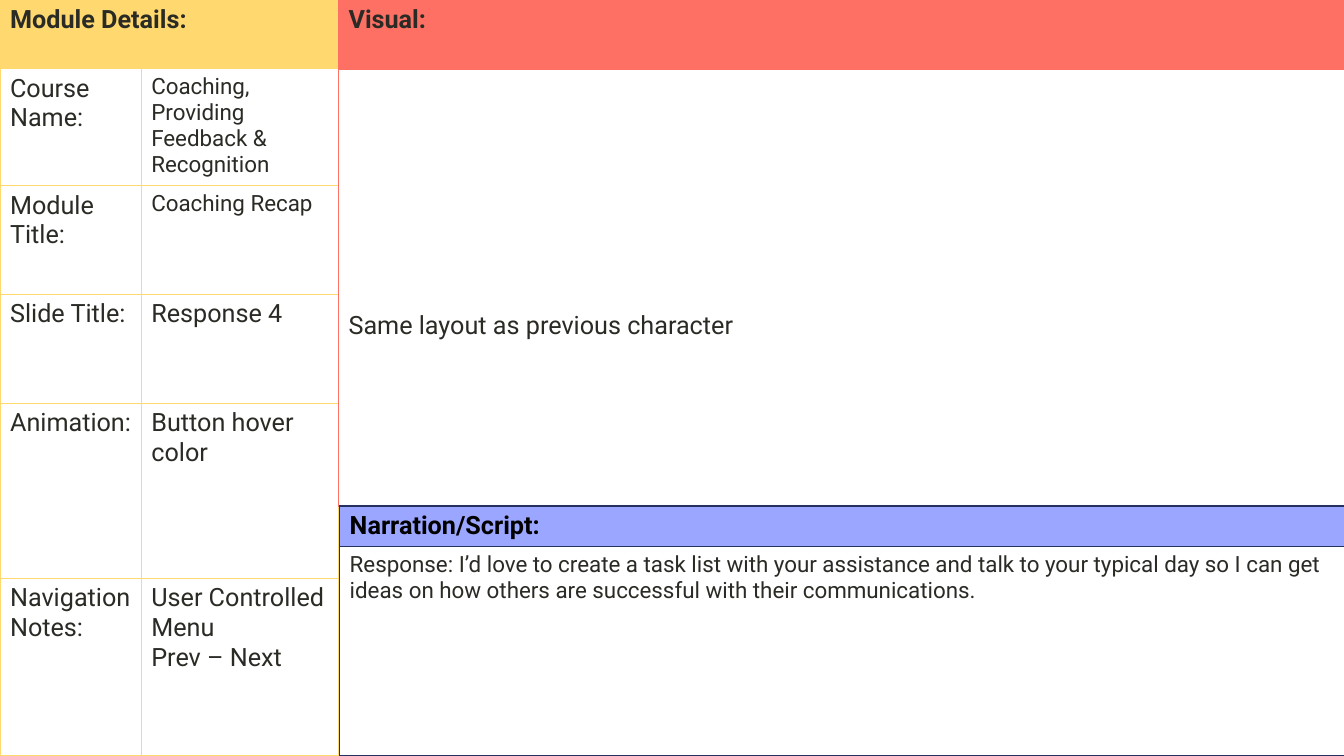
import pptx
import pptx.dml.color
import pptx.oxml
import pptx.oxml.ns
import pptx.util

Cm = pptx.util.Cm
RGBColor = pptx.dml.color.RGBColor

YELLOW = RGBColor(0xFF, 0xD9, 0x6F)
CORAL = RGBColor(0xFF, 0x70, 0x64)
PERIWINKLE = RGBColor(0x9A, 0xA6, 0xFF)
NAVY = RGBColor(0x23, 0x30, 0x60)
INK = RGBColor(0x2B, 0x2B, 0x26)
BLACK = RGBColor(0, 0, 0)
WHITE = RGBColor(0xFF, 0xFF, 0xFF)
GREY = RGBColor(0xD9, 0xD9, 0xD9)
PAPER = RGBColor(0xF9, 0xF9, 0xF9)

FONT = "Roboto"
DETAILS = [
    ("Course Name:", "Coaching, Providing Feedback & Recognition", 16),
    ("Module Title:", "Coaching Recap", 16),
    ("Slide Title:", "Response 4", 18),
    ("Animation:", "Button hover color", 18),
    ("Navigation Notes:", "User Controlled\nMenu\nPrev – Next", 18),
]
SCRIPT = (
    "Response: I’d love to create a task list with your assistance and talk to "
    "your typical day so I can get ideas on how others are successful with "
    "their communications."
)


def set_borders(cell, color, **sides):
    properties = cell._tc.get_or_add_tcPr()
    for position, side in enumerate("LRTB"):
        line = pptx.oxml.parse_xml(
            f'<a:ln{side} {pptx.oxml.ns.nsdecls("a")} w="12700">'
            f'<a:solidFill><a:srgbClr val="{sides.get(side, color)}"/></a:solidFill>'
            f'</a:ln{side}>'
        )
        properties.insert(position, line)


def fill_cell(cell, text, size=18, color=INK, bold=False, fill=WHITE):
    cell.fill.solid()
    cell.fill.fore_color.rgb = fill
    cell.text_frame.text = text
    for para in cell.text_frame.paragraphs:
        for span in para.runs:
            span.font.name = FONT
            span.font.size = pptx.util.Pt(size)
            span.font.bold = bold
            span.font.color.rgb = color


def add_grid(page, left, top, widths, heights, border):
    frame = page.shapes.add_table(
        len(heights), len(widths), Cm(left), Cm(top),
        Cm(sum(widths)), Cm(sum(heights)),
    )
    table = frame.table
    table.first_row = False
    table.horz_banding = False
    for column, width in zip(table.columns, widths):
        column.width = Cm(width)
    for row, height in zip(table.rows, heights):
        row.height = Cm(height)
    for cell in table.iter_cells():
        set_borders(cell, border)
    return table


def add_details(page):
    table = add_grid(page, 0, 0, [3.56, 4.97],
                     [1.73, 2.95, 2.74, 2.74, 4.42, 4.47], YELLOW)
    table.cell(0, 0).merge(table.cell(0, 1))
    fill_cell(table.cell(0, 0), "Module Details:", bold=True, fill=YELLOW)
    for row, (label, value, size) in enumerate(DETAILS, start=1):
        label_cell, value_cell = table.cell(row, 0), table.cell(row, 1)
        fill_cell(label_cell, label)
        fill_cell(value_cell, value, size)
        for cell, tag in ((label_cell, "a:lnR"), (value_cell, "a:lnL")):
            line = cell._tc.tcPr.find(pptx.oxml.ns.qn(tag))
            line[0][0].set("val", str(GREY))


def add_visual(page):
    table = add_grid(page, 8.53, 0, [25.35], [1.75, 11], CORAL)
    fill_cell(table.cell(0, 0), "Visual:", bold=True, fill=CORAL)
    body = table.cell(1, 0)
    fill_cell(body, "Same layout as previous character")
    body.margin_top = Cm(6.08)


def add_narration(page):
    heading = add_grid(page, 8.56, 12.75, [25.35], [1.02], NAVY)
    fill_cell(heading.cell(0, 0), "Narration/Script:", color=BLACK,
              bold=True, fill=PERIWINKLE)
    body = add_grid(page, 8.56, 13.77, [25.35], [5.28], NAVY)
    fill_cell(body.cell(0, 0), SCRIPT, 16)


def main():
    deck = pptx.Presentation()
    deck.slide_width = Cm(33.87)
    deck.slide_height = Cm(19.05)
    page = deck.slides.add_slide(deck.slide_layouts[6])
    page.background.fill.solid()
    page.background.fill.fore_color.rgb = PAPER
    add_details(page)
    add_visual(page)
    add_narration(page)
    deck.save("out.pptx")


if __name__ == "__main__":
    main()
